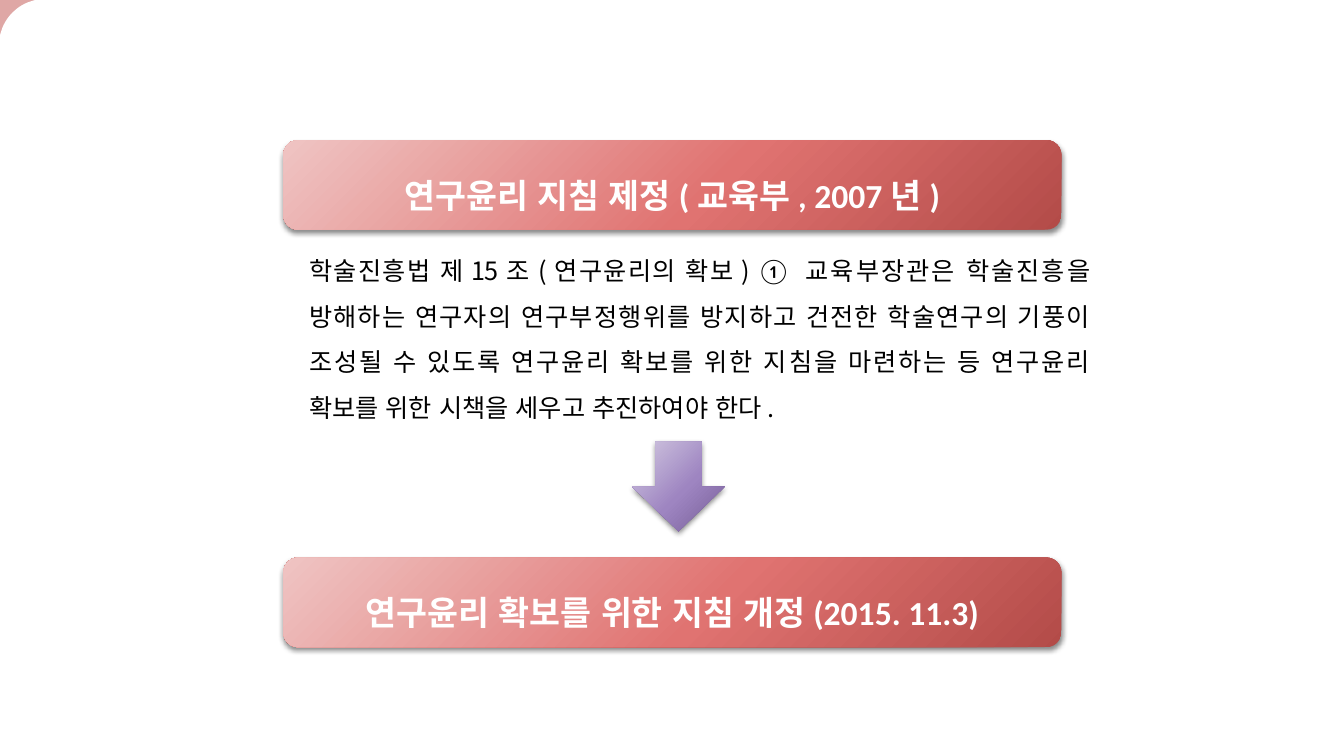
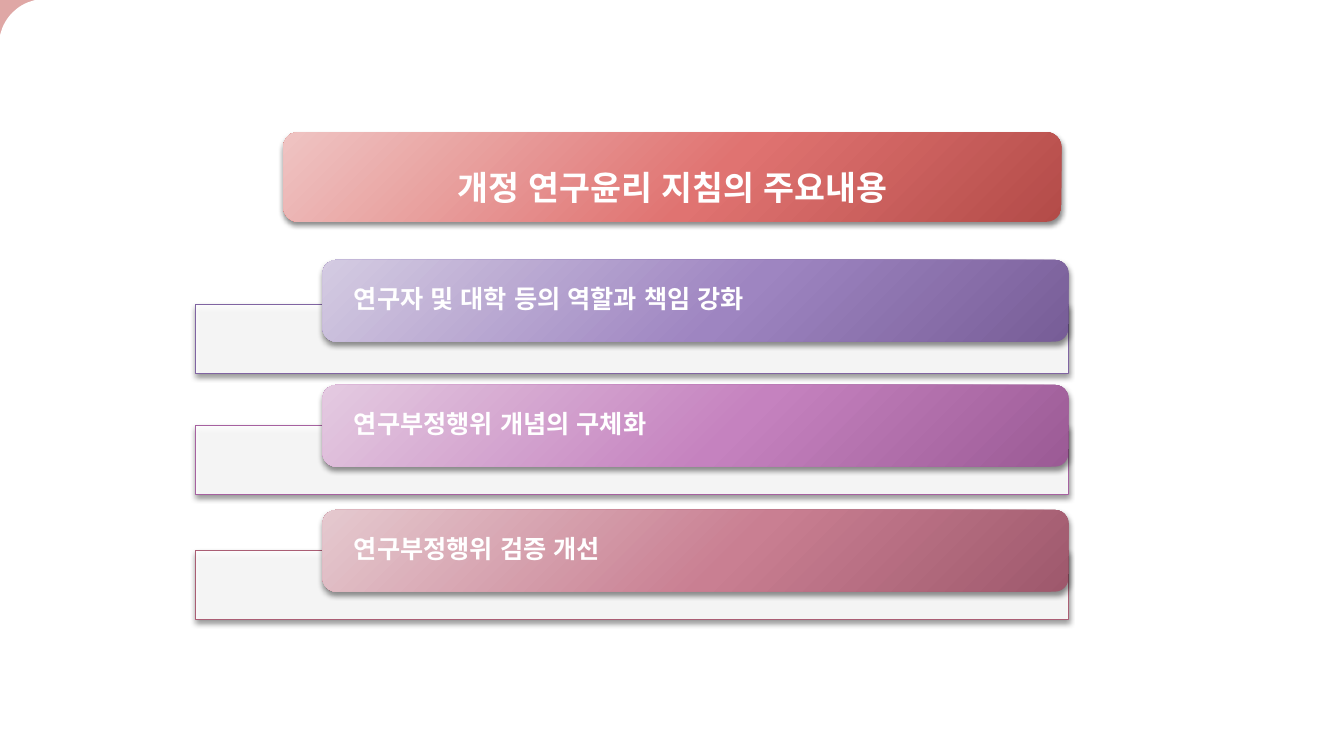
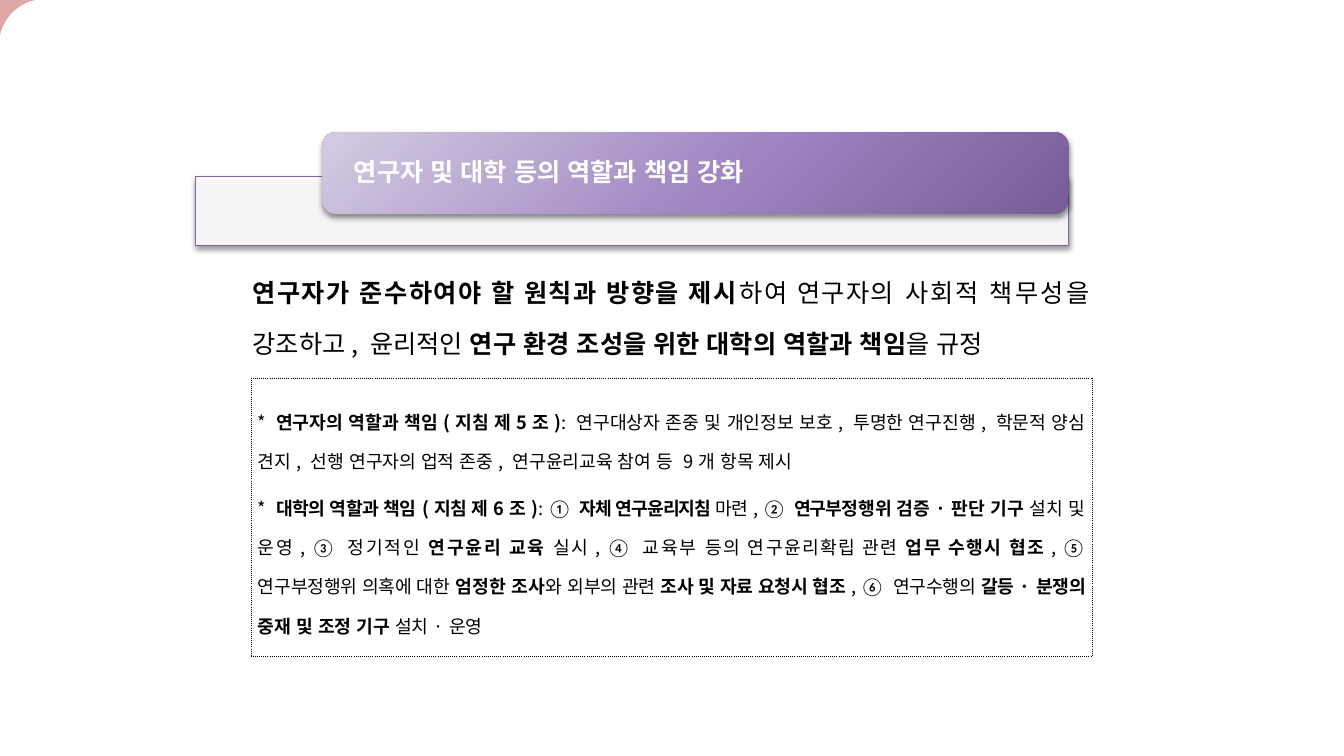
from pptx import Presentation
from pptx.dml.color import RGBColor
from pptx.enum.lang import MSO_LANGUAGE_ID as Lang
from pptx.enum.shapes import MSO_SHAPE as Kind
from pptx.enum.text import MSO_ANCHOR as Anchor, PP_ALIGN as Align
from pptx.oxml import parse_xml
from pptx.oxml.ns import nsdecls, qn
from pptx.util import Cm, Pt
from lxml.etree import SubElement

LATIN, KOREAN = "Calibri", "Noto Sans CJK KR"
WHITE, BLACK = "FFFFFF", "000000"
RED = ("EFC4C3", "E07371", "B34B48")
VIOLET = ("D4CBE2", "9E85C1", "775D97")
PINK = ("E4CAE1", "C582BF", "9B5A95")
ROSE = ("E5C9CF", "C97F92", "9E586C")
STOPS = (0, 55, 100)

# Each phrase is text, bold, letter spacing in points
LAW = [
    ("학술진흥법 제15조(연구윤리의 확보) ① ", False, -0.5),
    ("교육부장관은 학술진흥을 방해하는 연구자의 연구부정행위를 방지하고 건전한 "
     "학술연구의 기풍이 조성될 수 있도록 연구윤리 확보를 위한 지침을 마련하는 등 "
     "연구윤리 확보를 위한 시책을 세우고 추진하여야 한다. ", False, 0),
]
ROLE = "연구자 및 대학 등의 역할과 책임 강화"
# Label, gradient, edge colour, drop of the tray below the tab
TOPICS = [
    (ROLE, VIOLET, "8064A2", 1.12),
    ("연구부정행위 개념의 구체화", PINK, "A661A0", 1.02),
    ("연구부정행위 검증 개선", ROSE, "AA5E74", 1.02),
]
AIM = [
    ("연구자가 준수하여야 할 원칙과 방향을 제시", True, -0.7),
    ("하여 연구자의 ", False, -0.7),
    ("사회적 ", False, -0.4),
    ("책무성을 강조하고, 윤리적인 ", False, 0),
    ("연구 환경 조성을 위한 대학의 역할과 책임", True, 0),
    ("을 규정", False, 0),
]
DUTIES = [
    [
        ("* ", False, 0),
        ("연구자의 역할과 책임(지침 제5조)", True, 0),
        (": ", False, 0),
        ("연구대상자 존중 및 개인정보 보호, 투명한 연구진행, 학문적 양심 견지, "
         "선행 연구자의 업적 존중, 연구윤리교육 참여 등 9개 항목 제시", False, 0),
    ],
    [
        ("* ", False, 0),
        ("대학의 역할과 책임(지침 제6조)", True, -0.4),
        (": ", False, -0.4),
        ("① ", False, -0.7),
        ("자체 연구윤리지침 ", True, -0.7),
        ("마련, ② ", False, -0.7),
        ("연구부정", True, -0.7),
        ("행위 검증", True, -0.1),
        ("·판단 기구 ", True, 0),
        ("설치 및 운영, ③ 정기적인 ", False, 0),
        ("연구윤리 교육 ", True, 0),
        ("실시, ④ 교육부 ", False, 0),
        ("등의 연구윤리확립 관련 ", False, -0.3),
        ("업무 수행시 협조", True, -0.3),
        (", ⑤ 연구부정행위 의혹에 대한 ", False, -0.3),
        ("엄정한 조사", True, 0),
        ("와 ", False, 0),
        ("외부의 관련 ", False, -0.3),
        ("조사 및 자료 요청시 협조", True, -0.3),
        (", ⑥ 연구수행의 ", False, -0.3),
        ("갈등·분쟁의 중", True, -0.3),
        ("재 및 조정 기구 ", True, 0),
        ("설치·운영", False, 0),
    ],
]


def rgb(code):
    return RGBColor.from_string(code)


def split(text):
    """Cut text where Korean meets Latin; a space stays with what precedes it."""
    parts = []
    for char in text:
        wide = char >= "①"
        if parts and (char == " " or parts[-1][1] == wide):
            parts[-1][0] += char
        else:
            parts.append([char, wide])
    return parts


def add_run(para, text, size, color, bold, face=LATIN, gap=0):
    run = para.add_run()
    run.text = text
    font = run.font
    font.name, font.size, font.bold = face, Pt(size), bold
    font.color.rgb = rgb(color)
    font.language_id = Lang.KOREAN
    props = run._r.get_or_add_rPr()
    if gap:
        props.set("spc", str(round(gap * 100)))
    east = SubElement(props, qn("a:ea"))
    east.set("typeface", KOREAN)


def write(frame, paras, size, spacing, before):
    """Fill a frame with justified paragraphs of phrases."""
    frame.word_wrap = True
    for i, phrases in enumerate(paras):
        para = frame.add_paragraph() if i else frame.paragraphs[0]
        para.alignment, para.line_spacing = Align.JUSTIFY, spacing
        para.space_before = Pt(before[i])
        for text, bold, gap in phrases:
            for part, wide in split(text):
                add_run(para, part, size, BLACK, bold,
                        LATIN if wide else KOREAN, gap)


def add_text(slide, box, phrases, spacing):
    area = slide.shapes.add_textbox(*map(Cm, box))
    write(area.text_frame, [phrases], 18, spacing, [5])


def add_box(shapes, kind, box, fill=None, alpha=100, edge=None, width=0.75):
    shape = shapes.add_shape(kind, *map(Cm, box))
    shape.shadow.inherit = False
    if fill:
        shape.fill.solid()
        shape.fill.fore_color.rgb = rgb(fill)
        if alpha < 100:
            tint = shape.element.spPr.find(".//" + qn("a:srgbClr"))
            SubElement(tint, qn("a:alpha")).set("val", str(alpha * 1000))
    if edge:
        shape.line.color.rgb = rgb(edge)
        shape.line.width = Pt(width)
    else:
        shape.line.fill.background()
    return shape


def cast(shape):
    """Give the shape a soft shadow just below it."""
    effects = shape.element.spPr.find(qn("a:effectLst"))
    effects.append(parse_xml(
        f'<a:outerShdw {nsdecls("a")} blurRad="50800" dist="25400" dir="5400000" '
        f'rotWithShape="0"><a:srgbClr val="{BLACK}"><a:alpha val="45000"/>'
        '</a:srgbClr></a:outerShdw>'))


def add_glow(shapes, kind, box, colors):
    """Add a shape with a shadow and a gradient that spreads from its upper left."""
    shape = add_box(shapes, kind, box)
    stops = "".join(f'<a:gs pos="{pos * 1000}"><a:srgbClr val="{color}"/></a:gs>'
                    for pos, color in zip(STOPS, colors))
    props = shape.element.spPr
    props.find(qn("a:prstGeom")).addnext(parse_xml(
        f'<a:gradFill {nsdecls("a")} rotWithShape="1"><a:gsLst>{stops}</a:gsLst>'
        '<a:path path="circle"><a:fillToRect l="-40000" t="-90000" r="140000" '
        'b="190000"/></a:path></a:gradFill>'))
    cast(shape)
    return shape


def label(shape, text, size, align, spacing):
    frame = shape.text_frame
    frame.word_wrap, frame.vertical_anchor = True, Anchor.MIDDLE
    para = frame.paragraphs[0]
    para.alignment, para.line_spacing = align, spacing
    add_run(para, text, size, WHITE, True)


def add_title(slide, top, text):
    bar = add_glow(slide.shapes, Kind.ROUNDED_RECTANGLE,
                   (7.14, top, 19.61, 2.26), RED)
    label(bar, text, 24, Align.CENTER, 1.5)


def add_topic(shapes, top, topic):
    """Add a tab with its label over a pale tray."""
    text, colors, edge, drop = topic
    cast(add_box(shapes, Kind.RECTANGLE, (4.93, top + drop, 22, 1.75),
                 WHITE, 90, edge))
    tab = add_glow(shapes, Kind.ROUNDED_RECTANGLE, (8.13, top, 18.8, 2.06), colors)
    frame = tab.text_frame
    frame.margin_left = frame.margin_right = Cm(0.69)
    frame.margin_top = frame.margin_bottom = 0
    label(tab, text, 18, Align.LEFT, 0.9)


def add_duties(slide):
    table = slide.shapes.add_table(
        1, 1, Cm(6.32), Cm(9.52), Cm(21.21), Cm(7.01)).table
    table.first_row = table.horz_banding = False
    cell = table.cell(0, 0)
    cell.fill.background()
    cell.vertical_anchor = Anchor.MIDDLE
    cell.margin_left = cell.margin_right = Cm(0.18)
    cell.margin_top = cell.margin_bottom = Cm(0.05)
    props = cell._tc.get_or_add_tcPr()
    for i, side in enumerate("LRTB"):
        props.insert(i, parse_xml(
            f'<a:ln{side} {nsdecls("a")} w="{Pt(0.28)}"><a:solidFill>'
            f'<a:srgbClr val="{BLACK}"/></a:solidFill>'
            f'<a:prstDash val="sysDot"/></a:ln{side}>'))
    write(cell.text_frame, DUTIES, 13, 1.5, [0, 5])


def add_back(slide, layout):
    """Build the rounded page and its red corner, and move them to the layout."""
    band = add_box(slide.shapes, Kind.RECTANGLE, (0, 0, 9.02, 1.5), "C0504D", 50)
    page = add_box(slide.shapes, Kind.ROUNDED_RECTANGLE, (0, 0, 33.87, 19.05),
                   WHITE, edge=WHITE, width=1.5)
    page.adjustments[0] = 0.06
    for shape in (band, page):
        layout.shapes.element.append(shape.element)


def main():
    deck = Presentation()
    deck.slide_width, deck.slide_height = Cm(33.87), Cm(19.05)
    blank = deck.slide_layouts[6]
    rules, topics, role = [deck.slides.add_slide(blank) for _ in range(3)]
    add_back(rules, blank)

    add_title(rules, 3.53, "연구윤리 지침 제정(교육부, 2007년)")
    add_title(rules, 14.05, "연구윤리 확보를 위한 지침 개정(2015. 11.3)")
    add_glow(rules.shapes, Kind.DOWN_ARROW, (15.93, 11.13, 2.34, 2.26), VIOLET)
    add_text(rules, (7.54, 5.94, 20.19, 4.88), LAW, 1.5)

    add_title(topics, 3.33, "개정 연구윤리 지침의 주요내용")
    group = topics.shapes.add_group_shape()
    for i, topic in enumerate(TOPICS):
        add_topic(group.shapes, 6.55 + 3.15 * i, topic)

    add_topic(role.shapes, 3.33, TOPICS[0])
    add_text(role, (6.12, 6.32, 21.59, 2.87), AIM, 1.7)
    add_duties(role)
    deck.save("out.pptx")


if __name__ == "__main__":
    main()
